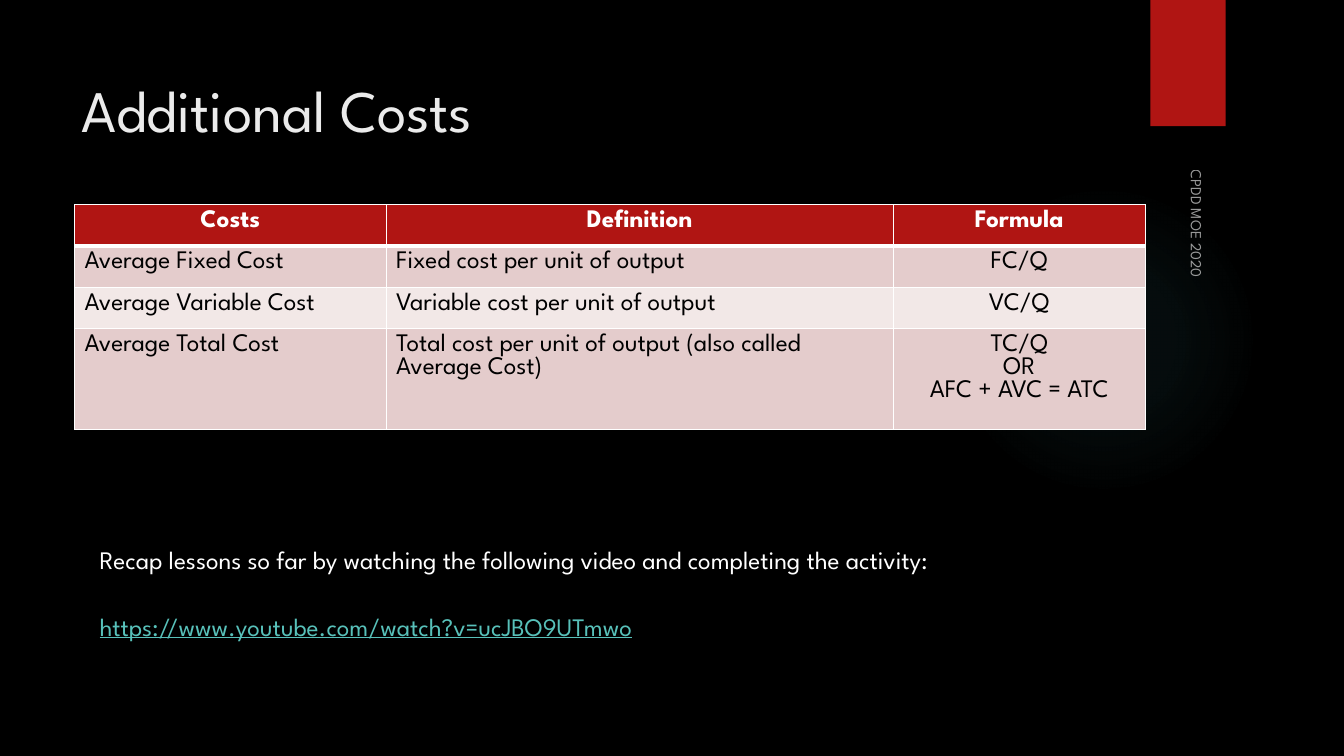
from lxml import etree
from pptx import Presentation
from pptx.dml.color import RGBColor
from pptx.enum import shapes, text
from pptx.oxml import parse_xml
from pptx.oxml.ns import nsdecls, qn
from pptx.util import Cm, Pt

FONT = "League Spartan"
RED, WHITE, BLACK = "B01513", "FFFFFF", "000000"
BANDS = ["E4CCCC", "F2E8E7"]
COSTS = [
    ["Costs", "Definition", "Formula"],
    ["Average Fixed Cost", "Fixed cost per unit of output", "FC/Q"],
    ["Average Variable Cost", "Variable cost per unit of output", "VC/Q"],
    ["Average Total Cost",
     "Total cost per unit of output (also called Average Cost)",
     "TC/Q\nOR\nAFC + AVC = ATC"],
]


def color(value):
    return RGBColor.from_string(value)


def style(p, size, value, bold=False):
    p.font.name, p.font.size, p.font.bold = FONT, Pt(size), bold
    p.font.color.rgb = color(value)


def add_text(slide, box, lines, size, value, top=0.13):
    """Place a text box and return it with its paragraphs styled."""
    sp = slide.shapes.add_textbox(*map(Cm, box))
    tf = sp.text_frame
    tf.word_wrap = True
    tf.margin_top = Cm(top)
    tf.text = "\n".join(lines)
    for p in tf.paragraphs:
        style(p, size, value)
    return sp


def add_plain_shape(slide, kind, box):
    sp = slide.shapes.add_shape(kind, *map(Cm, box))
    sp.shadow.inherit = False
    sp.line.fill.background()
    return sp


def add_glow(slide, box):
    sp = add_plain_shape(slide, shapes.MSO_SHAPE.OVAL, box)
    stops = "".join(
        f'<a:gs pos="{pos}000"><a:srgbClr val="50B9C1">'
        f'<a:alpha val="{alpha}000"/></a:srgbClr></a:gs>'
        for pos, alpha in [(0, 7), (36, 6), (69, 0)])
    grad = parse_xml(
        f'<a:gradFill {nsdecls("a")} rotWithShape="1"><a:gsLst>{stops}</a:gsLst>'
        '<a:path path="circle"><a:fillToRect l="50000" t="50000" r="50000" '
        'b="50000"/></a:path></a:gradFill>')
    sp._element.spPr.find(qn("a:prstGeom")).addnext(grad)


def add_ribbon(slide, box):
    sp = add_plain_shape(slide, shapes.MSO_SHAPE.RECTANGLE, box)
    sp.fill.solid()
    sp.fill.fore_color.rgb = color(RED)


def add_footer(slide, box):
    sp = add_text(slide, box, ["CPDD MOE 2020"], 11, WHITE)
    sp.rotation = 90
    sp.text_frame.vertical_anchor = text.MSO_ANCHOR.BOTTOM
    for clr in sp._element.iter(qn("a:srgbClr")):
        etree.SubElement(clr, qn("a:alpha")).set("val", "60000")


def add_borders(cell, bottom):
    tcPr = cell._tc.get_or_add_tcPr()
    widths = {"lnL": 1, "lnR": 1, "lnT": 1, "lnB": bottom}
    for i, (side, width) in enumerate(widths.items()):
        tcPr.insert(i, parse_xml(
            f'<a:{side} {nsdecls("a")} w="{Pt(width)}"><a:solidFill>'
            f'<a:srgbClr val="{WHITE}"/></a:solidFill></a:{side}>'))


def add_cost_table(slide, box):
    table = slide.shapes.add_table(len(COSTS), 3, *map(Cm, box)).table
    for column, width in zip(table.columns, [7.85, 12.78, 6.35]):
        column.width = Cm(width)
    for row, height in zip(table.rows, [1.04, 1.04, 1.04, 2.01]):
        row.height = Cm(height)
    for i, values in enumerate(COSTS):
        header = i == 0
        for j, value in enumerate(values):
            cell = table.cell(i, j)
            cell.text = value
            cell.fill.solid()
            cell.fill.fore_color.rgb = color(RED if header else BANDS[(i - 1) % 2])
            add_borders(cell, 3 if header else 1)
            for p in cell.text_frame.paragraphs:
                style(p, 18, WHITE if header else BLACK, header)
                if header or j == 2:
                    p.alignment = text.PP_ALIGN.CENTER


def add_recap(slide, box):
    sp = add_text(slide, box, [
        "Recap lessons so far by watching the following video and completing the activity:",
        "https://www.youtube.com/watch?v=ucJBO9UTmwo"], 18, WHITE, top=0.33)
    link = sp.text_frame.paragraphs[1]
    link.space_before = Pt(26)
    link.font.underline = True
    link.font.color.rgb = color("58C1BA")


def main():
    prs = Presentation()
    prs.slide_width, prs.slide_height = Cm(33.87), Cm(19.05)
    slide = prs.slides.add_slide(prs.slide_layouts[6])
    slide.background.fill.solid()
    slide.background.fill.fore_color.rgb = color(BLACK)

    # Backdrop
    add_glow(slide, (23.9, 4.65, 7.82, 7.82))
    add_ribbon(slide, (28.99, 0, 1.9, 3.18))
    # Content
    add_text(slide, (1.8, 1.27, 26.14, 3.89), ["Additional Costs"], 42, "EBEBEB", top=0.58)
    add_footer(slide, (24.87, 8.97, 10.72, 0.84))
    add_cost_table(slide, (1.88, 5.16, 26.98, 5.13))
    add_recap(slide, (2.26, 13.39, 28.37, 3.33))
    prs.save("out.pptx")


if __name__ == "__main__":
    main()
